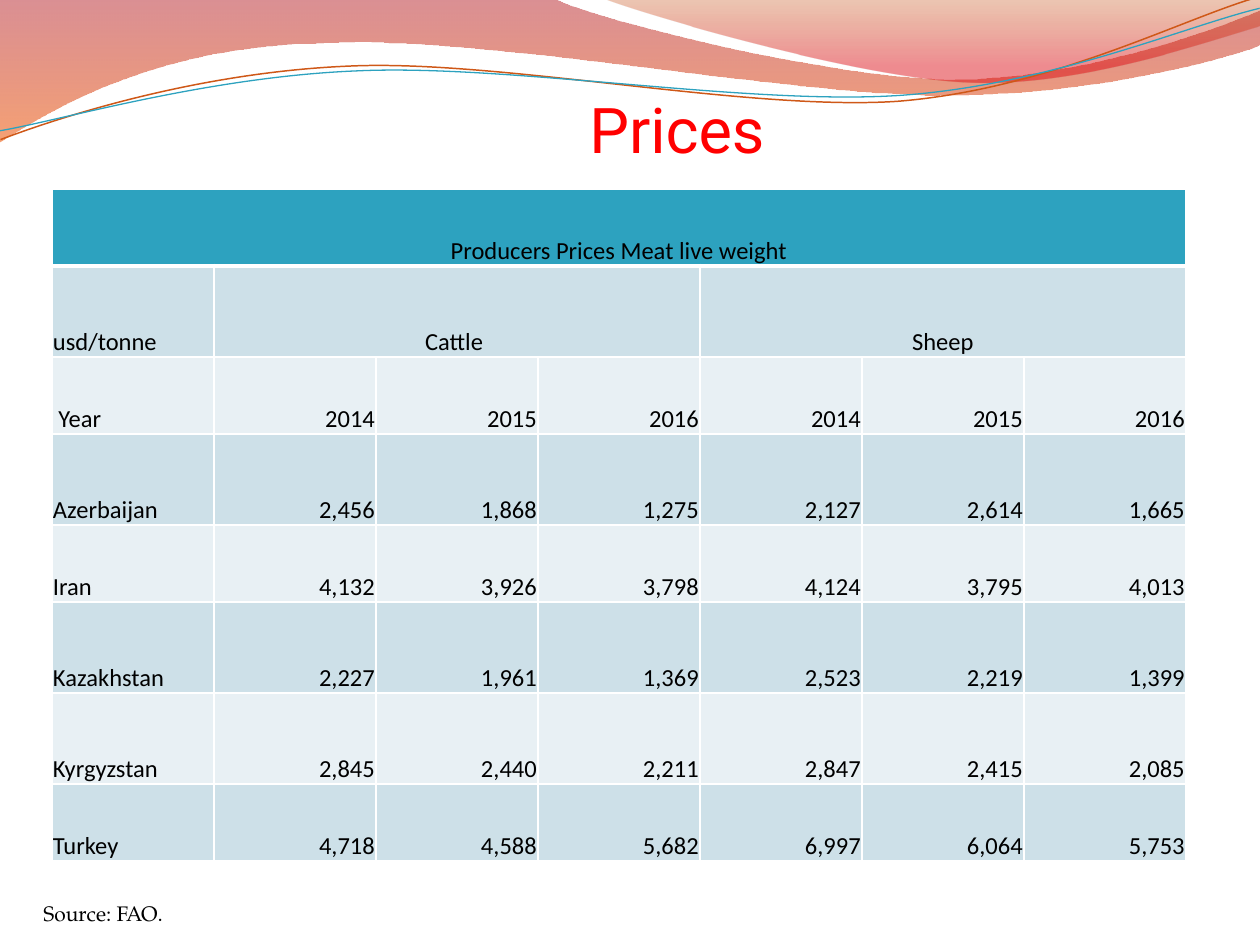
"""Build a slide with a table of producer prices for meat under a wavy banner."""
import dataclasses
import typing

import lxml.etree
import pptx
import pptx.dml.color
import pptx.enum.text
import pptx.oxml.ns
import pptx.util

ALIGN = pptx.enum.text.PP_ALIGN
ANCHOR = pptx.enum.text.MSO_ANCHOR
AUTO_SIZE = pptx.enum.text.MSO_AUTO_SIZE
EMU_PER_PX = 914400 / 126

COLUMN_COUNT = 7
COLUMN_WIDTH = 162
LOW, HIGH = 77, 91
ROW_HEIGHTS = [LOW, HIGH, LOW, HIGH, LOW, HIGH, HIGH, LOW]
HEADER_FILL = "2DA2BF"
BAND_FILLS = ["E8F0F4", "CDE0E8"]
PRICE_ROWS = [
    ["Producers Prices Meat live weight", "", "", "", "", "", ""],
    ["usd/tonne", "Cattle ", "", "", "Sheep", "", ""],
    [" Year", "2014", "2015", "2016", "2014", "2015", "2016"],
    ["Azerbaijan", "2,456", "1,868", "1,275", "2,127", "2,614", "1,665"],
    ["Iran", "4,132", "3,926", "3,798", "4,124", "3,795", "4,013"],
    ["Kazakhstan", "2,227", "1,961", "1,369", "2,523", "2,219", "1,399"],
    ["Kyrgyzstan", "2,845", "2,440", "2,211", "2,847", "2,415", "2,085"],
    ["Turkey", "4,718", "4,588", "5,682", "6,997", "6,064", "5,753"],
]


class Stop(typing.NamedTuple):
    """A gradient stop with its opacity in percent."""
    position: float
    color: str
    opacity: int


@dataclasses.dataclass
class Wave:
    """A path of straight (x, y) and cubic (x1, y1, x2, y2, x, y) pieces."""
    start: tuple
    pieces: list
    stops: tuple = ()
    color: str = ""
    weight: float = 0
    rotation: float = 0


WAVES = [
    Wave((0, 0), [
        (554, -1), (600, 21, 837, 79, 955, 79), (1075, 79, 1207, 33, 1260, 11),
        (1261, 45), (1239, 55, 1096, 96, 940, 95), (784, 95, 481, 35, 324, 43),
        (163, 45, 58, 105, -1, 142), (0, 0),
    ], stops=(Stop(0, "AF0911", 45), Stop(1, "EE5300", 55))),
    Wave((604, -1), [
        (641, 14, 859, 78, 969, 82), (1079, 87, 1211, 40, 1260, 26), (1260, 0),
        (604, -1),
    ], stops=(Stop(0, "C24400", 30), Stop(0.8, "DC000B", 45))),
    Wave((-2, 110), [
        (59, 90, 199, 52, 350, 53), (499, 53, 745, 117, 896, 114),
        (1049, 109, 1184, 45, 1260, 27),
    ], color="CF5818", weight=0.85, rotation=357.3),
    Wave((-2, 101), [
        (57, 94, 207, 57, 357, 58), (509, 58, 750, 112, 902, 108),
        (1052, 104, 1188, 52, 1262, 38),
    ], color="2DA2BF", weight=0.75, rotation=357.3),
]


def px(length: int) -> pptx.util.Emu:
    """Turn pixels into EMU."""
    return pptx.util.Emu(round(length * EMU_PER_PX))


def rgb(color: str) -> pptx.dml.color.RGBColor:
    """Turn a hex string into a colour."""
    return pptx.dml.color.RGBColor.from_string(color)


def place(shape, left: int, top: int, width: int, height: int) -> None:
    """Set the position and size of a shape."""
    shape.left, shape.top = px(left), px(top)
    shape.width, shape.height = px(width), px(height)


def format_text(frame, font: str, size: int, color: str, alignment) -> None:
    """Format every paragraph and run of a text frame."""
    for para in frame.paragraphs:
        para.alignment = alignment
        for span in para.runs:
            span.font.name = font
            span.font.size = pptx.util.Pt(size)
            span.font.color.rgb = rgb(color)


def bend(shape, wave: Wave) -> None:
    """Turn the straight segments of the cubic pieces into curves."""
    anchors = [wave.start] + [piece[-2:] for piece in wave.pieces]
    left, top = (min(values) for values in zip(*anchors))
    segments = list(shape.element.iter(pptx.oxml.ns.qn("a:lnTo")))
    for segment, piece in zip(segments, wave.pieces):
        if len(piece) == 2:
            continue
        curve = lxml.etree.Element(pptx.oxml.ns.qn("a:cubicBezTo"))
        for x, y in zip(piece[::2], piece[1::2]):
            point = lxml.etree.SubElement(curve, pptx.oxml.ns.qn("a:pt"))
            point.set("x", str(x - left))
            point.set("y", str(y - top))
        segment.getparent().replace(segment, curve)


def fill_gradient(shape, stops: tuple) -> None:
    """Fill a shape from top to bottom with translucent stops."""
    shape.fill.gradient()
    shape.fill.gradient_angle = 270
    for target, stop in zip(shape.fill.gradient_stops, stops):
        target.color.rgb = rgb(stop.color)
        target.position = stop.position
    colors = shape.element.spPr.iter(pptx.oxml.ns.qn("a:srgbClr"))
    for color, stop in zip(colors, stops):
        alpha = lxml.etree.SubElement(color, pptx.oxml.ns.qn("a:alpha"))
        alpha.set("val", str(stop.opacity * 1000))


def draw_wave(page, wave: Wave) -> None:
    """Draw a filled wave or an open wavy line."""
    builder = page.shapes.build_freeform(*wave.start, scale=EMU_PER_PX)
    builder.add_line_segments([piece[-2:] for piece in wave.pieces],
                              close=bool(wave.stops))
    shape = builder.convert_to_shape()
    bend(shape, wave)
    shape.rotation = wave.rotation
    shape.shadow.inherit = False
    if wave.stops:
        fill_gradient(shape, wave.stops)
        shape.line.fill.background()
    else:
        shape.fill.background()
        shape.line.color.rgb = rgb(wave.color)
        shape.line.width = pptx.util.Pt(wave.weight)


def add_borders(cell, top: int, bottom: int) -> None:
    """Give a cell white borders with widths in points."""
    properties = cell._tc.get_or_add_tcPr()
    for side, weight in (("L", 1), ("R", 1), ("T", top), ("B", bottom)):
        border = lxml.etree.SubElement(properties, pptx.oxml.ns.qn(f"a:ln{side}"))
        border.set("w", str(pptx.util.Pt(weight)))
        solid = lxml.etree.SubElement(border, pptx.oxml.ns.qn("a:solidFill"))
        color = lxml.etree.SubElement(solid, pptx.oxml.ns.qn("a:srgbClr"))
        color.set("val", "FFFFFF")


def cell_alignment(row: int, column: int):
    """Centre headings, left-align names and right-align numbers."""
    if row == 0 or (row == 1 and column):
        return ALIGN.CENTER
    return ALIGN.RIGHT if column else ALIGN.LEFT


def draw_prices(page) -> None:
    """Draw the table of prices."""
    table = page.shapes.add_table(
        len(PRICE_ROWS), COLUMN_COUNT, px(52), px(189),
        px(COLUMN_COUNT * COLUMN_WIDTH), px(sum(ROW_HEIGHTS))).table
    table.first_row = table.horz_banding = False
    for column in table.columns:
        column.width = px(COLUMN_WIDTH)
    for row, height in zip(table.rows, ROW_HEIGHTS):
        row.height = px(height)
    for row, texts in enumerate(PRICE_ROWS):
        for column, text in enumerate(texts):
            cell = table.cell(row, column)
            add_borders(cell, 3 if row == 1 else 1, 3 if row == 0 else 1)
            cell.fill.solid()
            cell.fill.fore_color.rgb = rgb(BAND_FILLS[row % 2] if row else HEADER_FILL)
            cell.vertical_anchor = ANCHOR.BOTTOM
            cell.margin_left = cell.margin_right = cell.margin_top = px(1)
            cell.margin_bottom = 0
            if text:
                cell.text_frame.text = text
                format_text(cell.text_frame, "Calibri", 14, "000000",
                            cell_alignment(row, column))
    for row, first, last in ((0, 0, 6), (1, 1, 3), (1, 4, 6)):
        table.cell(row, first).merge(table.cell(row, last))


def main() -> None:
    """Build and save the deck."""
    deck = pptx.Presentation()
    deck.slide_width, deck.slide_height = px(1260), px(945)
    page = deck.slides.add_slide(deck.slide_layouts[5])
    for wave in WAVES:
        draw_wave(page, wave)
    title = page.shapes.title
    page.shapes.element.append(title.element)
    place(title, 94, 84, 1166, 158)
    title.text_frame.text = "Prices"
    title.text_frame.auto_size = AUTO_SIZE.NONE
    title.text_frame.vertical_anchor = ANCHOR.TOP
    format_text(title.text_frame, "Roboto", 36, "FF0000", ALIGN.CENTER)
    box = page.shapes.add_textbox(px(31), px(894), px(149), px(38))
    box.text_frame.text = "Source: FAO."
    box.text_frame.word_wrap = False
    box.text_frame.auto_size = AUTO_SIZE.SHAPE_TO_FIT_TEXT
    format_text(box.text_frame, "TeX Gyre Pagella", 12, "000000", ALIGN.LEFT)
    draw_prices(page)
    deck.save("out.pptx")


if __name__ == "__main__":
    main()
